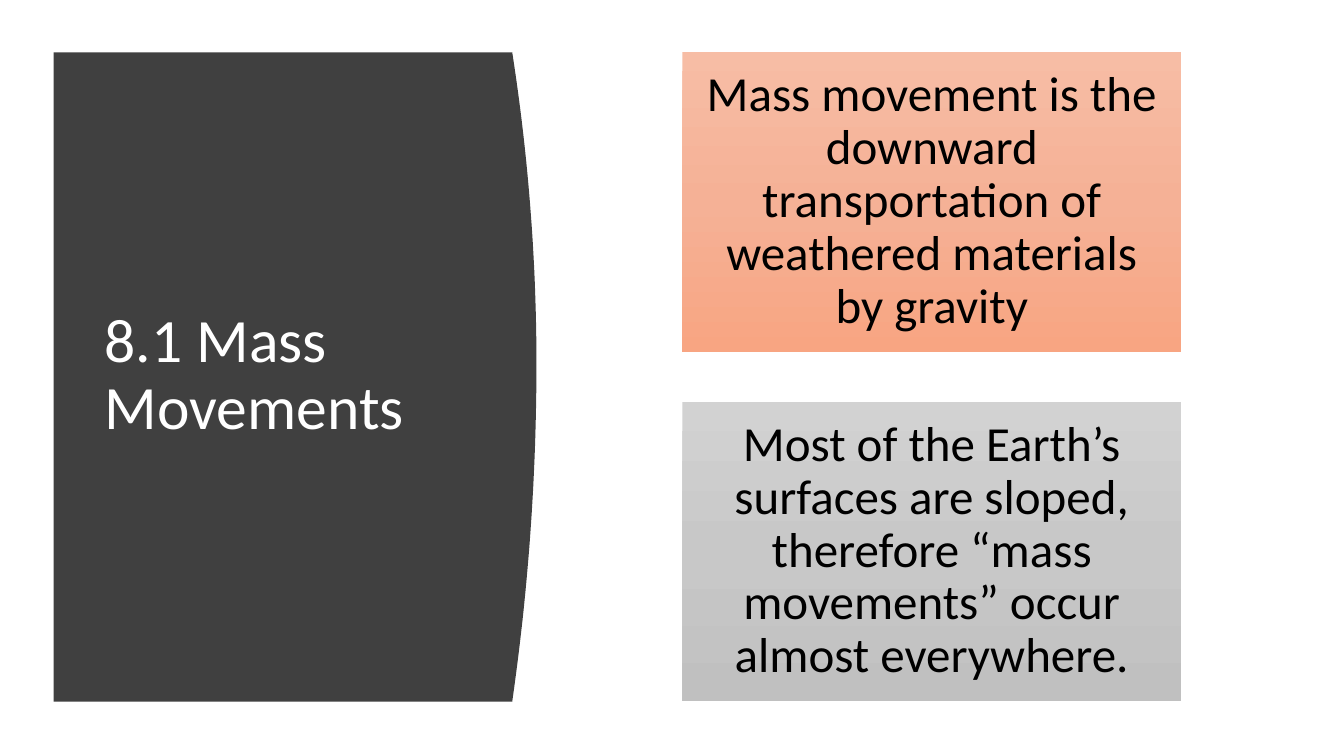
from copy import deepcopy

from pptx import Presentation
from pptx.dml.color import RGBColor
from pptx.enum.shapes import MSO_SHAPE
from pptx.enum.text import MSO_ANCHOR, PP_ALIGN
from pptx.oxml.ns import qn
from pptx.util import Cm, Pt

RECTANGLE = MSO_SHAPE.RECTANGLE
MIDDLE = MSO_ANCHOR.MIDDLE
LEFT, CENTER = PP_ALIGN.LEFT, PP_ALIGN.CENTER
TITLE_ONLY = 5
CURVE_STEPS = 48
STATEMENTS = [
    ("Mass movement is the downward transportation of weathered materials by gravity",
     ("F7BDA5", "F5B196", "F8A582")),
    ("Most of the Earth’s surfaces are sloped, therefore “mass movements” occur "
     "almost everywhere.", ("D2D2D2", "C8C8C8", "C0C0C0")),
]


def rgb(value):
    """Turn a hex string into a colour."""
    return RGBColor.from_string(value)


def write(shape, text, size, color, align=LEFT, inset=0.25):
    """Write one formatted paragraph, centred vertically in a shape."""
    frame = shape.text_frame
    frame.word_wrap = True
    frame.vertical_anchor = MIDDLE
    frame.margin_left = frame.margin_right = Cm(inset)
    frame.margin_top = frame.margin_bottom = Cm(inset)
    paragraph = frame.paragraphs[0]
    paragraph.alignment = align
    paragraph.line_spacing = 0.9
    run = paragraph.add_run()
    run.text = text
    run.font.name = "Calibri"
    run.font.size = Pt(size)
    run.font.color.rgb = rgb(color)


def fill_gradient(shape, colors):
    """Fill a shape from top to bottom with three evenly spaced colours."""
    shape.fill.gradient()
    shape.fill.gradient_angle = 270
    stops = shape._element.spPr.find(qn("a:gradFill")).find(qn("a:gsLst"))
    stops.insert(1, deepcopy(stops[0]))
    for index, (stop, color) in enumerate(zip(shape.fill.gradient_stops, colors)):
        stop.position = index / 2
        stop.color.rgb = rgb(color)


def add_title_panel(slide, left, top, width, height, bulge=0.61):
    """Draw the dark panel with its bowed right edge and place the title on it."""
    peak = 0.48 * height
    edge = []
    for step in range(CURVE_STEPS + 1):
        y = height * step / CURVE_STEPS
        reach = peak if y < peak else height - peak
        x = width - bulge * ((y - peak) / reach) ** 2
        edge.append((Cm(left + x), Cm(top + y)))
    outline = slide.shapes.build_freeform(Cm(left), Cm(top))
    outline.add_line_segments(edge + [(Cm(left), Cm(top + height))])
    panel = outline.convert_to_shape()
    panel.shadow.inherit = False
    panel.fill.solid()
    panel.fill.fore_color.rgb = rgb("404040")
    panel.line.fill.background()

    title = slide.shapes.title
    panel._element.addnext(title._element)
    title.left, title.top = Cm(left + 1.04), Cm(top + 1.5)
    title.width, title.height = Cm(9.5), Cm(height - 3.05)
    write(title, "8.1 Mass Movements", size=44, color="FFFFFF")


def add_statements(slide, left, top, width, height, gap=1.26):
    """Stack the statement cards evenly in the given box."""
    card_height = (height - gap * (len(STATEMENTS) - 1)) / len(STATEMENTS)
    for index, (statement, colors) in enumerate(STATEMENTS):
        card_top = top + index * (card_height + gap)
        card = slide.shapes.add_shape(
            RECTANGLE, Cm(left), Cm(card_top), Cm(width), Cm(card_height))
        card.shadow.inherit = False
        card.line.fill.background()
        fill_gradient(card, colors)
        write(card, statement, size=35, color="000000", align=CENTER, inset=0.38)


def main():
    """Build and save the slide."""
    deck = Presentation()
    deck.slide_width, deck.slide_height = Cm(33.87), Cm(19.05)
    slide = deck.slides.add_slide(deck.slide_layouts[TITLE_ONLY])
    add_title_panel(slide, 1.35, 1.32, 12.17, 16.36)
    add_statements(slide, 17.2, 1.32, 12.57, 16.34)
    deck.save("out.pptx")


if __name__ == "__main__":
    main()
